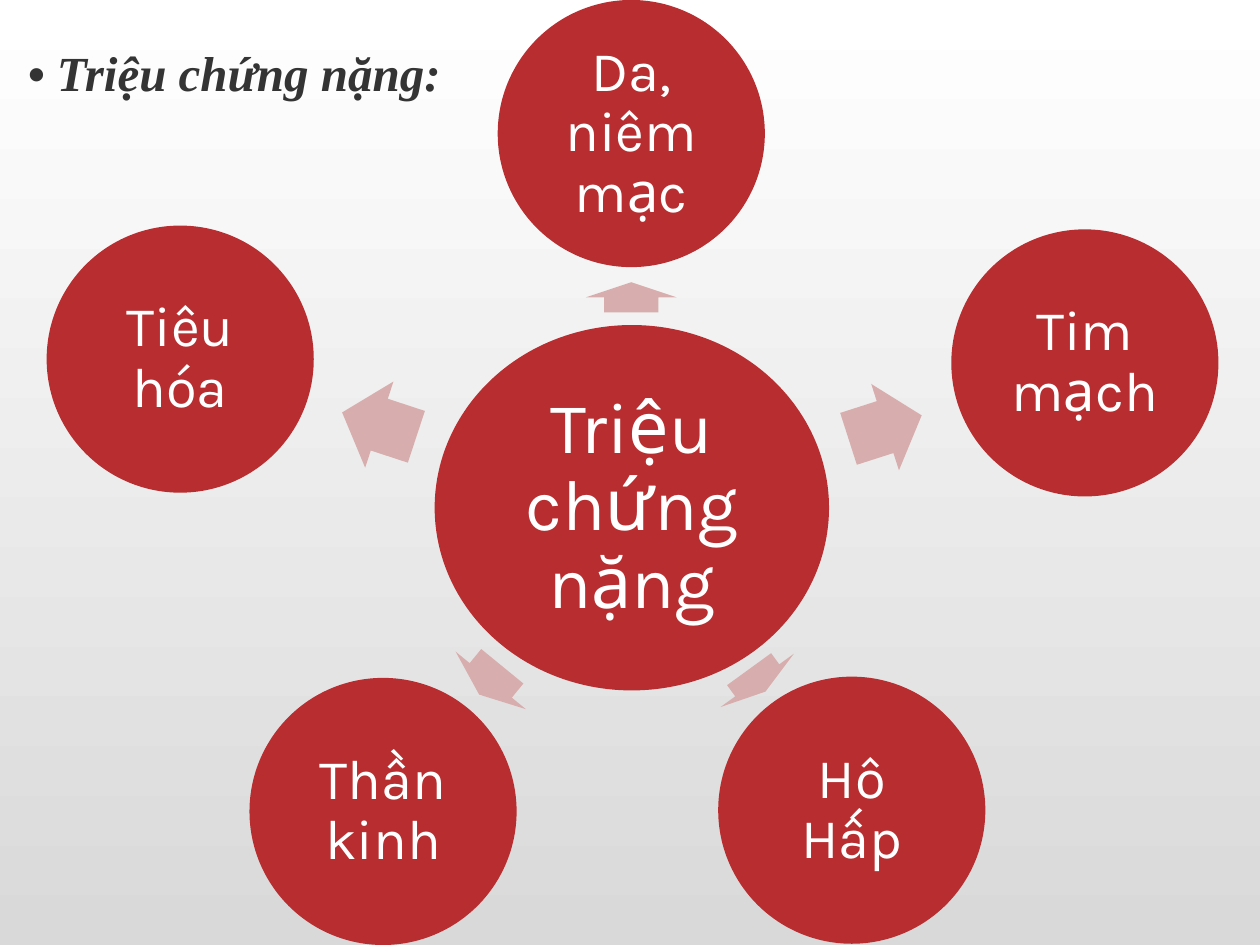
from pptx import Presentation
from pptx.dml.color import RGBColor
from pptx.enum.shapes import MSO_SHAPE
from pptx.enum.text import MSO_ANCHOR, MSO_AUTO_SIZE, PP_ALIGN
from pptx.util import Inches, Pt

RED, PINK, WHITE, DARK, GREY = "B82D2F", "D8ADAD", "FFFFFF", "343434", "D9D9D9"
DIAMETER, ARROW_HEIGHT = 2.12, 0.72
HUB = ("Triệu chứng nặng", (3.45, 2.58, 3.13, 2.9))
SYMPTOMS = [
    ("Da, niêm mạc", (3.95, 0), (4.89, 2), 0.24, 270),
    ("Tim mạch", (7.55, 1.82), (6.72, 3.03), 0.61, 342.2),
    ("Hô Hấp", (5.7, 5.37), (5.9, 5.04), 0.22, 54),
    ("Thần kinh", (1.98, 5.38), (3.75, 5.04), 0.29, 129.3),
    ("Tiêu hóa", (0.37, 1.79), (2.7, 3.01), 0.62, 198.2),
]


def rgb(value):
    return RGBColor.from_string(value)


def set_attrs(obj, values):
    for name, value in values.items():
        setattr(obj, name, value)


def add_run(p, text, color, **font):
    r = p.add_run()
    r.text = text
    set_attrs(r.font, font)
    r.font.color.rgb = rgb(color)


def add_filled(s, kind, box, color):
    sp = s.shapes.add_shape(kind, *map(Inches, box))
    sp.shadow.inherit = False
    sp.fill.solid()
    sp.fill.fore_color.rgb = rgb(color)
    sp.line.fill.background()
    return sp


def add_circle(s, box, text, size, inset):
    sp = add_filled(s, MSO_SHAPE.OVAL, box, RED)
    tf = sp.text_frame
    sides = ("left", "top", "right", "bottom")
    set_attrs(tf, {f"margin_{side}": Inches(inset) for side in sides})
    set_attrs(tf, {"word_wrap": True, "vertical_anchor": MSO_ANCHOR.MIDDLE})
    p = tf.paragraphs[0]
    set_attrs(p, {"alignment": PP_ALIGN.CENTER, "line_spacing": 0.9})
    add_run(p, text, WHITE, name="Karla", size=Pt(size))


def add_arrow(s, box, rotation):
    sp = add_filled(s, MSO_SHAPE.RIGHT_ARROW, box, PINK)
    sp.adjustments[0] = 0.6
    sp.adjustments[1] = 0.5
    sp.rotation = rotation


def add_diagram(s):
    add_circle(s, HUB[1], HUB[0], 41, 0.06)
    for text, circle, arrow, length, rotation in SYMPTOMS:
        add_arrow(s, (*arrow, length, ARROW_HEIGHT), rotation)
        add_circle(s, (*circle, DIAMETER, DIAMETER), text, 32, 0.04)


def add_heading(s, box, text):
    tf = s.shapes.add_textbox(*map(Inches, box)).text_frame
    set_attrs(tf, {"word_wrap": True, "auto_size": MSO_AUTO_SIZE.SHAPE_TO_FIT_TEXT})
    add_run(tf.paragraphs[0], text, DARK, name="Times New Roman",
            size=Pt(28), bold=True, italic=True)


def set_background(s):
    fill = s.background.fill
    fill.gradient()
    fill.gradient_angle = 90
    for stop, color, position in zip(fill.gradient_stops, (GREY, WHITE), (0, 1)):
        stop.color.rgb = rgb(color)
        stop.position = position


def main():
    prs = Presentation()
    set_attrs(prs, {"slide_width": Inches(10), "slide_height": Inches(7.5)})
    s = prs.slides.add_slide(prs.slide_layouts[6])
    set_background(s)
    add_diagram(s)
    add_heading(s, (0.12, 0.29, 4.49, 0.57), "• Triệu chứng nặng:")
    prs.save("out.pptx")


if __name__ == "__main__":
    main()
